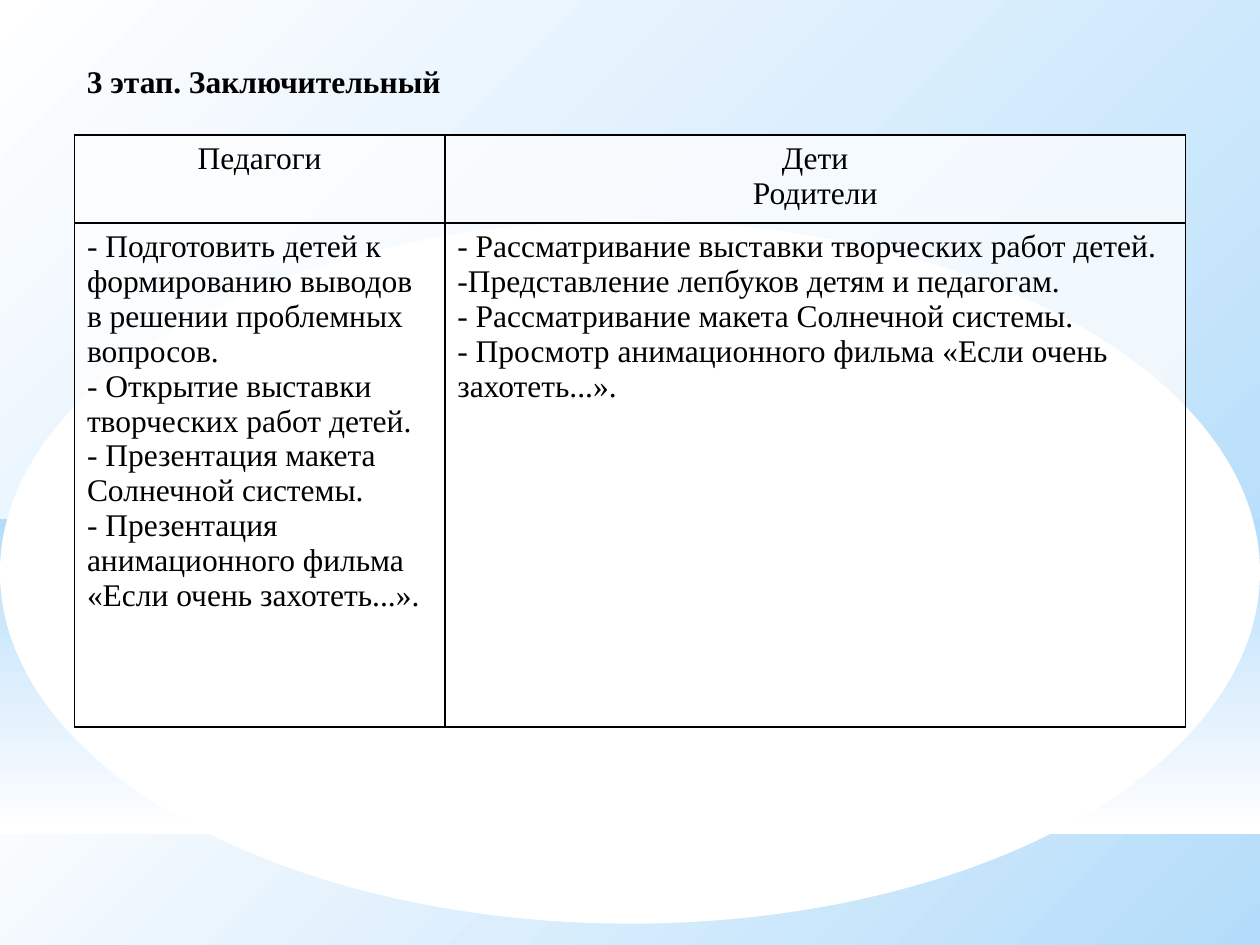
from lxml import etree
from pptx import Presentation
from pptx import util as u
from pptx.dml import color
from pptx.enum import shapes, text
from pptx.oxml import ns

COLOURS = {"white": "FFFFFF", "sky": "B4DCFA", "ink": "000000"}
FONT = "Times New Roman"
WIDTH, HEIGHT = 25.4, 19.05

HEADERS = [["Педагоги"], ["Дети", "Родители"]]
TASKS = [
    [
        "- Подготовить детей к формированию выводов в решении проблемных вопросов.",
        "- Открытие выставки творческих работ детей.",
        "- Презентация макета Солнечной системы.",
        "- Презентация анимационного фильма «Если очень захотеть...».",
    ],
    [
        "- Рассматривание выставки творческих работ детей.",
        "-Представление лепбуков детям и педагогам.",
        "- Рассматривание макета Солнечной системы.",
        "- Просмотр анимационного фильма «Если очень захотеть...».",
    ],
]


def rgb(name):
    return color.RGBColor.from_string(COLOURS[name])


def write(frame, lines, size=18, bold=False, align=text.PP_ALIGN.LEFT):
    for index, line in enumerate(lines):
        para = frame.paragraphs[0] if index == 0 else frame.add_paragraph()
        para.alignment = align
        span = para.add_run()
        span.text = line
        span.font.name = FONT
        span.font.size = u.Pt(size)
        span.font.bold = bold
        span.font.color.rgb = rgb("ink")


def add_plain(page, kind, box):
    shape = page.shapes.add_shape(kind, *map(u.Cm, box))
    shape.shadow.inherit = False
    shape.line.fill.background()
    return shape


def add_gradient(page, box, start, end, angle):
    fill = add_plain(page, shapes.MSO_SHAPE.RECTANGLE, box).fill
    fill.gradient()
    fill.gradient_angle = angle
    for stop, name, position in zip(fill.gradient_stops, (start, end), (0, 1)):
        stop.color.rgb = rgb(name)
        stop.position = position


def add_backdrop(page, box):
    left, top, width, height = box
    split = 14.17
    # Diagonal sky above and below, with a fading horizon between
    add_gradient(page, (left, top + split, width, height - split), "white", "sky", 315)
    add_gradient(page, (left, top, width, split), "white", "sky", 315)
    add_gradient(page, (left, top + 10.46, width, 6.35), "sky", "white", 270)
    # White oval
    oval = add_plain(page, shapes.MSO_SHAPE.OVAL, (left, top + 4.45, width, split))
    oval.fill.solid()
    oval.fill.fore_color.rgb = rgb("white")


def add_title(page, box, title):
    frame = page.shapes.add_textbox(*map(u.Cm, box)).text_frame
    frame.word_wrap = True
    write(frame, [title], bold=True)


def style_cell(cell, opacity=75, border=1):
    cell.fill.solid()
    cell.fill.fore_color.rgb = rgb("white")
    props = cell._tc.get_or_add_tcPr()
    tint = props.find(".//" + ns.qn("a:srgbClr"))
    etree.SubElement(tint, ns.qn("a:alpha"), val=str(opacity * 1000))
    # Borders come before the fill
    for index, side in enumerate(("lnL", "lnR", "lnT", "lnB")):
        line = etree.Element(ns.qn("a:" + side), w=str(u.Pt(border)))
        solid = etree.SubElement(line, ns.qn("a:solidFill"))
        etree.SubElement(solid, ns.qn("a:srgbClr"), val=COLOURS["ink"])
        props.insert(index, line)


def add_stage_table(page, box):
    rows = [HEADERS, TASKS]
    aligns = [text.PP_ALIGN.CENTER, text.PP_ALIGN.LEFT]
    table = page.shapes.add_table(2, 2, *map(u.Cm, box)).table
    width, height = box[2:]
    header_height = 1.78
    for column, share in zip(table.columns, (1, 2)):
        column.width = u.Cm(width * share / 3)
    for row, size in zip(table.rows, (header_height, height - header_height)):
        row.height = u.Cm(size)
    for r, (contents, align) in enumerate(zip(rows, aligns)):
        for c, lines in enumerate(contents):
            cell = table.cell(r, c)
            style_cell(cell)
            write(cell.text_frame, lines, align=align)


def main():
    deck = Presentation()
    deck.slide_width, deck.slide_height = u.Cm(WIDTH), u.Cm(HEIGHT)
    page = deck.slides.add_slide(deck.slide_layouts[6])
    add_backdrop(page, (0, 0, WIDTH, HEIGHT))
    add_title(page, (1.5, 1.12, 10, 1.02), "3 этап. Заключительный")
    add_stage_table(page, (1.5, 2.72, 22.4, 11.94))
    deck.save("out.pptx")


if __name__ == "__main__":
    main()
